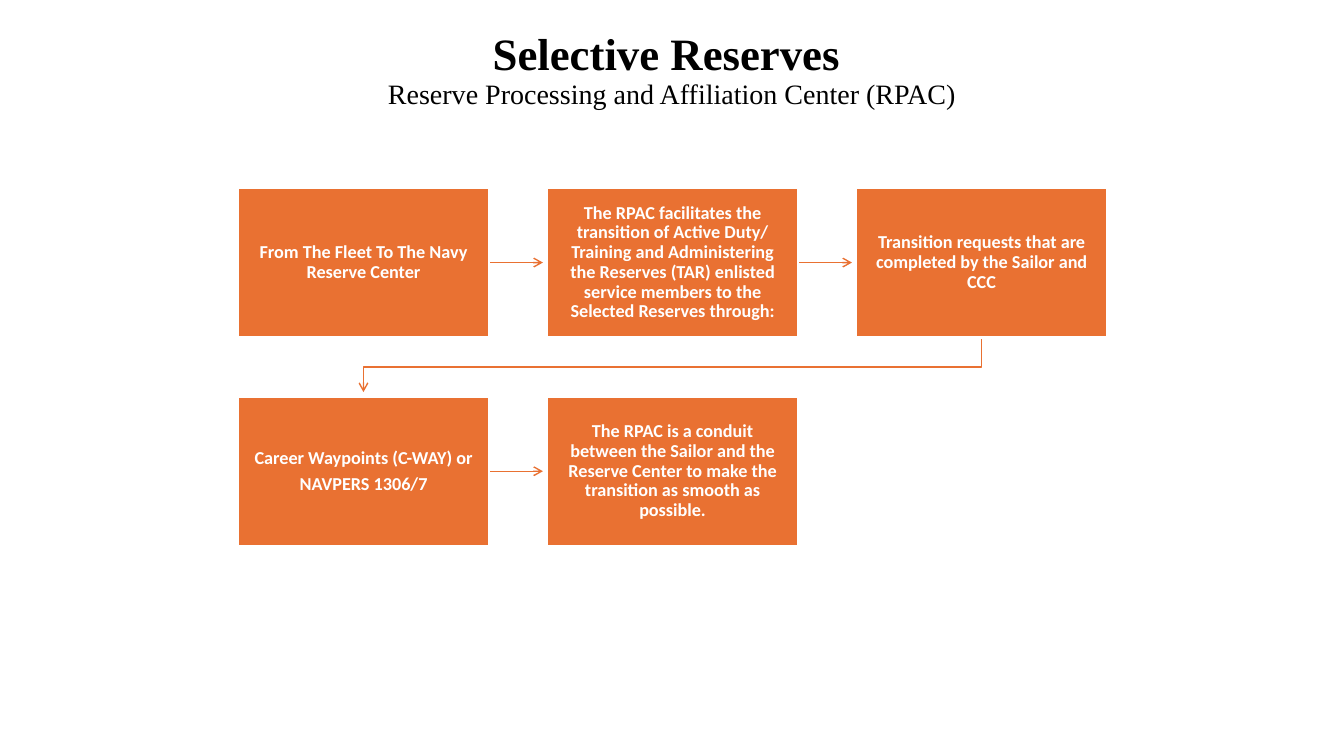
from lxml import etree
from pptx import Presentation
from pptx.dml.color import RGBColor
from pptx.enum import shapes, text
from pptx.oxml.ns import qn
from pptx.util import Inches, Pt

TITLE = "Selective Reserves\u00a0"
SUBTITLE = "Reserve Processing and Affiliation Center (RPAC)"
STEPS = [
    ["From The Fleet To The Navy Reserve Center"],
    ["The RPAC facilitates the transition of Active Duty/ Training and Administering "
     "the Reserves (TAR) enlisted service members to the Selected Reserves through:"],
    ["Transition requests that are completed by the Sailor and CCC"],
    ["Career Waypoints (C-WAY) or", "NAVPERS 1306/7"],
    ["The RPAC is a conduit between the Sailor and the Reserve Center to make the "
     "transition as smooth as possible."],
]
ORANGE, WHITE, BLACK = "E97132", "FFFFFF", "000000"

# Grid of steps, in inches
COLUMNS = 3
FIRST_LEFT, LAST_LEFT = 2.36, 8.49
TOP, ROW_PITCH = 1.86, 2.07
BOX_WIDTH, BOX_HEIGHT = 2.49, 1.49
COLUMN_PITCH = (LAST_LEFT - FIRST_LEFT) / (COLUMNS - 1)
ARROW_GAP = 0.04  # space between an arrowhead and the next box


def color(value):
    return RGBColor.from_string(value)


def add_span(para, words, *, size, font, fill, bold=False):
    span = para.add_run()
    span.text = words
    span.font.size, span.font.name, span.font.bold = Pt(size), font, bold
    span.font.color.rgb = color(fill)


def format_para(para, after=0):
    para.alignment = text.PP_ALIGN.CENTER
    para.line_spacing = 0.9
    para.space_before, para.space_after = Pt(0), Pt(after)


def format_arrow(shape):
    shape.line.color.rgb = color(ORANGE)
    shape.line.width = Pt(1)
    etree.SubElement(shape.line._get_or_add_ln(), qn("a:tailEnd"), type="arrow")


def add_step(slide, index, lines):
    row, column = divmod(index, COLUMNS)
    box = slide.shapes.add_shape(
        shapes.MSO_SHAPE.RECTANGLE,
        Inches(FIRST_LEFT + column * COLUMN_PITCH), Inches(TOP + row * ROW_PITCH),
        Inches(BOX_WIDTH), Inches(BOX_HEIGHT))
    box.shadow.inherit = False
    box.fill.solid()
    box.fill.fore_color.rgb = color(ORANGE)
    box.line.color.rgb = color(WHITE)
    box.line.width = Pt(2)

    frame = box.text_frame
    frame.word_wrap = True
    frame.vertical_anchor = text.MSO_ANCHOR.MIDDLE
    frame.margin_left = frame.margin_right = Inches(0.12)
    frame.margin_top = frame.margin_bottom = Inches(0.13)
    for number, line in enumerate(lines):
        para = frame.add_paragraph() if number else frame.paragraphs[0]
        format_para(para, after=4.55)
        add_span(para, line, size=13, font="Calibri", fill=WHITE, bold=True)
    return box


def add_straight_arrow(slide, start, end):
    middle = start.top + start.height // 2
    arrow = slide.shapes.add_connector(
        shapes.MSO_CONNECTOR.STRAIGHT, start.left + start.width, middle,
        end.left - Inches(ARROW_GAP), middle)
    arrow.begin_connect(start, 3)
    format_arrow(arrow)
    etree.SubElement(arrow._element.spPr, qn("a:effectLst"))
    return arrow


def add_return_arrow(slide, start, end):
    start_x, end_x = (box.left + box.width // 2 for box in (start, end))
    bottom = start.top + start.height
    middle = (bottom + end.top) // 2
    builder = slide.shapes.build_freeform(start_x, bottom)
    builder.add_line_segments(
        [(start_x, middle), (end_x, middle), (end_x, end.top - Inches(ARROW_GAP))],
        close=False)
    arrow = builder.convert_to_shape()
    arrow.shadow.inherit = False
    arrow.fill.background()
    format_arrow(arrow)
    return arrow


deck = Presentation()
deck.slide_width, deck.slide_height = Inches(13.33), Inches(7.5)
slide = deck.slides.add_slide(deck.slide_layouts[5])

# Title and subtitle
title = slide.shapes.title
title.left, title.top = Inches(0), Inches(0.01)
title.width, title.height = Inches(13.33), Inches(1.39)
title.text_frame.word_wrap = True
title.text_frame.auto_size = text.MSO_AUTO_SIZE.NONE
title.text_frame.vertical_anchor = text.MSO_ANCHOR.MIDDLE
heading = title.text_frame.paragraphs[0]
format_para(heading)
add_span(heading, TITLE, size=32, font="Times New Roman", fill=BLACK, bold=True)
heading.add_line_break()
etree.SubElement(heading._p.find(qn("a:br")), qn("a:rPr"), sz="3200")
add_span(heading, SUBTITLE, size=20, font="Times New Roman", fill=BLACK)

# Steps, each joined to the next by an arrow behind the boxes
boxes = [add_step(slide, index, lines) for index, lines in enumerate(STEPS)]
for start, end in zip(boxes, boxes[1:]):
    add_arrow = add_straight_arrow if start.top == end.top else add_return_arrow
    arrow = add_arrow(slide, start, end)
    boxes[0]._element.addprevious(arrow._element)

deck.save("out.pptx")
